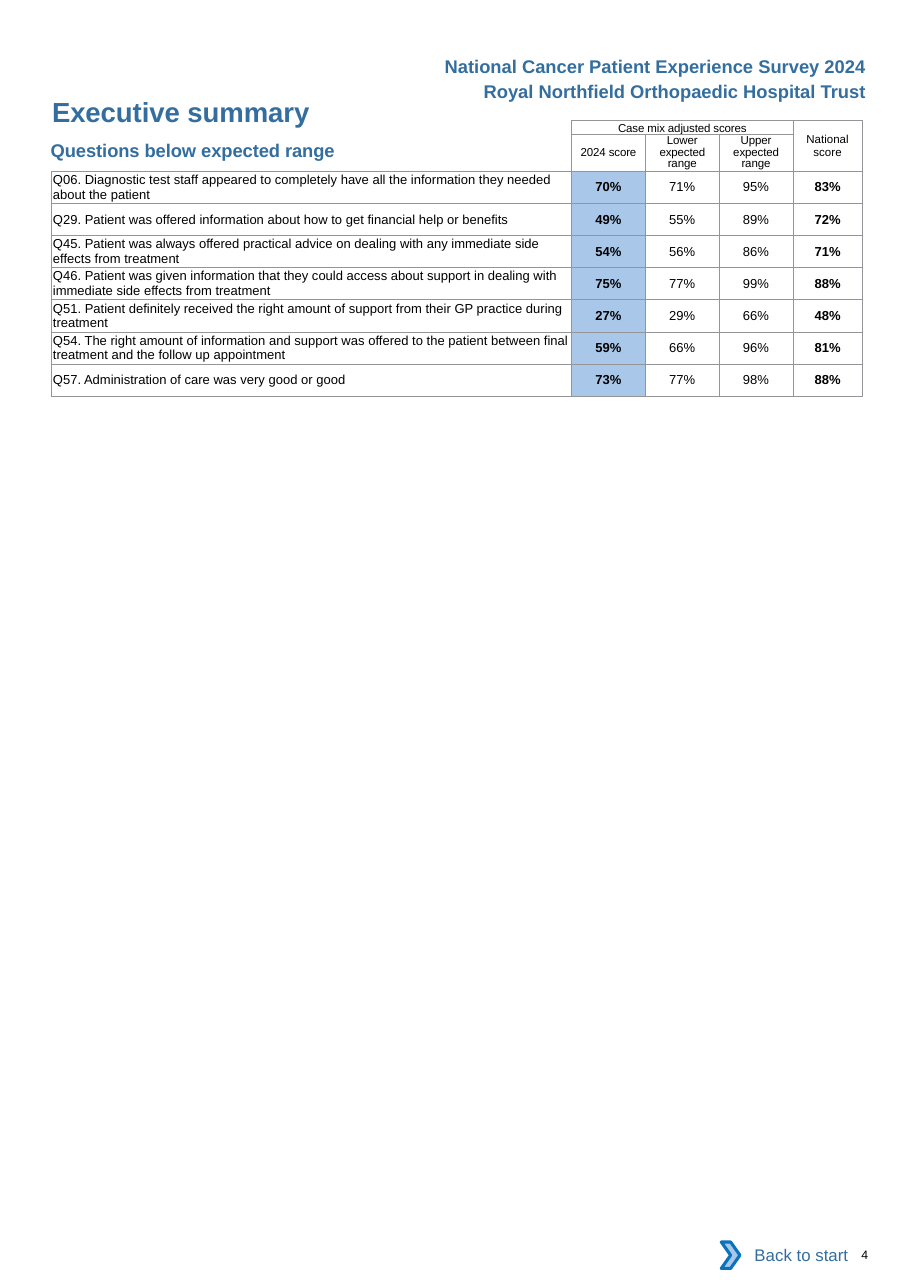
from lxml.etree import SubElement
from pptx import Presentation
from pptx.dml.color import RGBColor
from pptx.enum.shapes import MSO_SHAPE as Preset
from pptx.enum.text import MSO_ANCHOR as Anchor, PP_ALIGN as Align
from pptx.oxml.ns import qn
from pptx.util import Cm, Pt

COLORS = {
    "heading": "336E9F",
    "text": "000000",
    "score": "A8C7E9",
    "border": "939598",
    "chevron_line": "0A74BB",
    "page": "FFFFFF",
}
NO_STYLE = "{2D5ABB26-0587-4C30-8999-92F81FD0307C}"


def write(frame, text, size=12, color="heading", bold=False, align=Align.LEFT,
          anchor=Anchor.TOP, margin=0.0, line=None, spacing=0):
    frame.word_wrap = True
    frame.vertical_anchor = anchor
    frame.margin_left = frame.margin_right = Cm(margin)
    frame.margin_top = frame.margin_bottom = 0
    paragraph = frame.paragraphs[0]
    paragraph.alignment = align
    if line:
        paragraph.line_spacing = Pt(line)
    run = paragraph.add_run()
    run.text = text
    run.font.name = "Arial"
    run.font.size = Pt(size)
    run.font.bold = bold
    run.font.color.rgb = RGBColor.from_string(COLORS[color])
    if spacing:
        run.font._element.set("spc", str(round(spacing * 100)))


def outline_cell(cell):
    properties = cell._tc.get_or_add_tcPr()
    for side in ("a:lnL", "a:lnR", "a:lnT", "a:lnB"):
        edge = SubElement(properties, qn(side), w=str(Pt(0.5)))
        fill = SubElement(edge, qn("a:solidFill"))
        SubElement(fill, qn("a:srgbClr"), val=COLORS["border"])


prs = Presentation()
prs.slide_width, prs.slide_height = Cm(20.98), Cm(29.69)
slide = prs.slides.add_slide(prs.slide_layouts[6])

# Headings and page number
headings = [
    ("National Cancer Patient Experience Survey 2024", 8.5, 1.28, 11.47, dict(bold=True, align=Align.RIGHT)),
    ("Royal Northfield Orthopaedic Hospital Trust", 8.5, 1.86, 11.47, dict(bold=True, align=Align.RIGHT)),
    ("Executive summary", 1.2, 2.2, 7, dict(size=18, bold=True, spacing=-0.05)),
    ("Questions below expected range", 1.17, 3.21, 8, dict(bold=True, spacing=-0.05)),
    ("4", 19.86, 28.76, 0.8, dict(size=8, color="text")),
]
for text, left, top, width, style in headings:
    box = slide.shapes.add_textbox(Cm(left), Cm(top), Cm(width), Cm(0.5))
    write(box.text_frame, text, **style)

# Scores table
questions = [
    ("Q06. Diagnostic test staff appeared to completely have all the information they needed about the patient",
     "70%", "71%", "95%", "83%"),
    ("Q29. Patient was offered information about how to get financial help or benefits",
     "49%", "55%", "89%", "72%"),
    ("Q45. Patient was always offered practical advice on dealing with any immediate side effects from treatment",
     "54%", "56%", "86%", "71%"),
    ("Q46. Patient was given information that they could access about support in dealing with "
     "immediate side effects from treatment",
     "75%", "77%", "99%", "88%"),
    ("Q51. Patient definitely received the right amount of support from their GP practice during treatment",
     "27%", "29%", "66%", "48%"),
    ("Q54. The right amount of information and support was offered to the patient between final "
     "treatment and the follow up appointment",
     "59%", "66%", "96%", "81%"),
    ("Q57. Administration of care was very good or good",
     "73%", "77%", "98%", "88%"),
]
column_widths = [11.99, 1.7, 1.7, 1.7, 1.6]
row_heights = [0.32, 0.85] + [0.74] * len(questions)
scores = slide.shapes.add_table(
    len(row_heights), len(column_widths), Cm(1.19), Cm(2.78),
    Cm(sum(column_widths)), Cm(sum(row_heights))).table
scores.first_row = scores.horz_banding = False
scores._tbl.tblPr.find(qn("a:tableStyleId")).text = NO_STYLE
for column, width in zip(scores.columns, column_widths):
    column.width = Cm(width)
for row, height in zip(scores.rows, row_heights):
    row.height = Cm(height)

for r in range(len(row_heights)):
    for c in range(len(column_widths)):
        cell = scores.cell(r, c)
        cell.margin_left = cell.margin_right = cell.margin_top = cell.margin_bottom = 0
        if r > 1 or c > 0:
            outline_cell(cell)
        if r > 1 and c == 1:
            cell.fill.solid()
            cell.fill.fore_color.rgb = RGBColor.from_string(COLORS["score"])
        else:
            cell.fill.background()

for first, last in [((0, 0), (1, 0)), ((0, 1), (0, 3)), ((0, 4), (1, 4))]:
    scores.cell(*first).merge(scores.cell(*last))

entries = [
    (0, 1, "Case mix adjusted scores", dict(size=7.5, line=9, spacing=-0.1)),
    (0, 4, "National score", dict(size=7.5)),
    (1, 1, "2024 score", dict(size=7.5, spacing=-0.1)),
    (1, 2, "Lower expected range", dict(size=7.5, line=7.6, spacing=-0.1)),
    (1, 3, "Upper expected range", dict(size=7.5, line=7.6, spacing=-0.1)),
]
for r, question in enumerate(questions, start=2):
    for c, text in enumerate(question):
        entries.append((r, c, text, dict(size=8.5, bold=c in (1, 4))))
for r, c, text, style in entries:
    cell = scores.cell(r, c)
    cell.vertical_anchor = Anchor.MIDDLE
    write(cell.text_frame, text, color="text", align=Align.CENTER if c else Align.LEFT,
          anchor=Anchor.MIDDLE, **style)
    # The frame of a cell keeps its own margins
    cell.margin_left = cell.margin_right = Cm(0 if c else 0.03)

# Back to start button
back_label = slide.shapes.add_shape(Preset.RECTANGLE, Cm(16.81), Cm(28.4), Cm(3), Cm(1.07))
back_arrow = slide.shapes.add_shape(Preset.CHEVRON, Cm(16.63), Cm(28.63), Cm(0.43), Cm(0.61))
for part, fill in [(back_label, "page"), (back_arrow, "score")]:
    part.shadow.inherit = False
    part.fill.solid()
    part.fill.fore_color.rgb = RGBColor.from_string(COLORS[fill])
back_label.line.fill.background()
back_arrow.line.color.rgb = RGBColor.from_string(COLORS["chevron_line"])
back_arrow.line.width = Pt(2)
write(back_label.text_frame, "Back to start", size=11, align=Align.RIGHT,
      anchor=Anchor.MIDDLE, margin=0.25)

prs.save("out.pptx")
